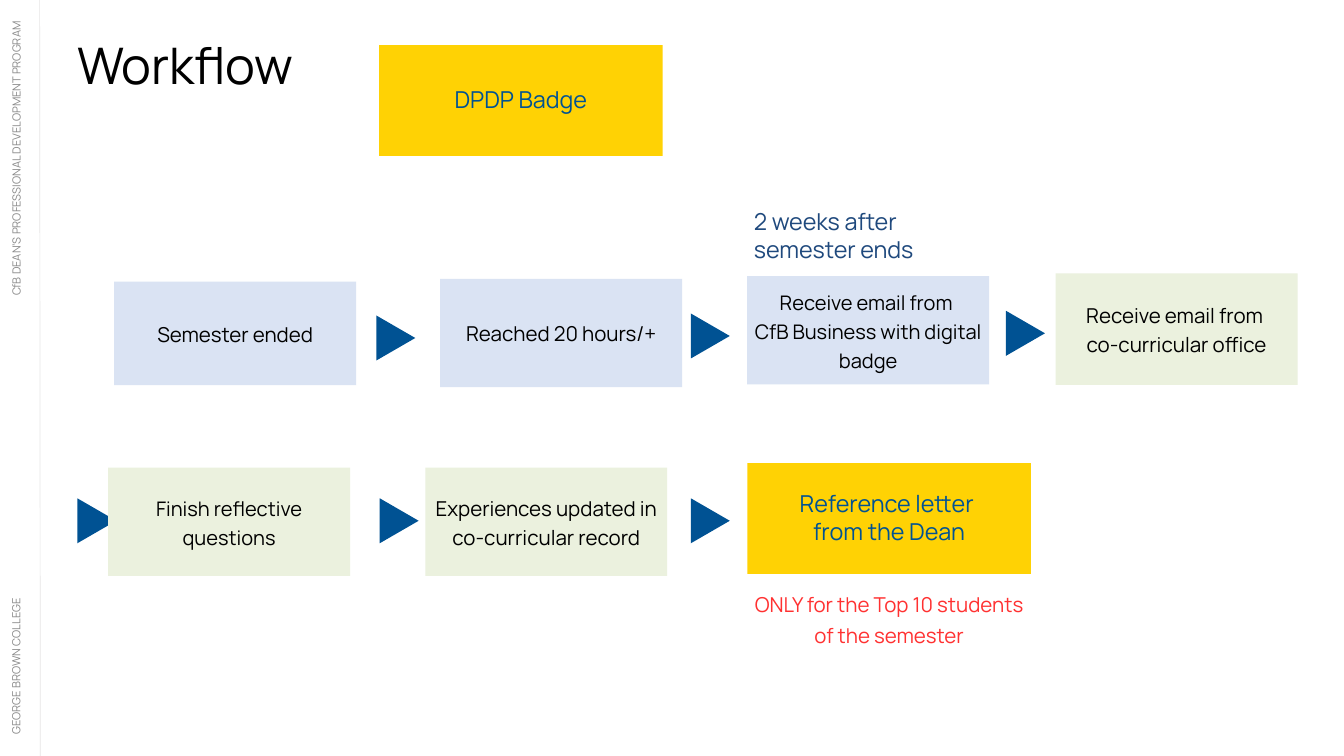
from lxml.etree import SubElement
from pptx import Presentation
from pptx.dml.color import RGBColor as Rgb
from pptx.enum.shapes import MSO_CONNECTOR as Conn, MSO_SHAPE as Kind
from pptx.enum.text import MSO_ANCHOR as Anchor, PP_ALIGN as Align
from pptx.oxml.ns import qn
from pptx.util import Inches, Pt

WIDE, HIGH = 20, 11.25
FONT = "Manrope"
BLACK = Rgb(0x00, 0x00, 0x00)
GREY = Rgb(0x89, 0x89, 0x89)
RULE = Rgb(0xE7, 0xE6, 0xE6)
BLUE = Rgb(0x00, 0x52, 0x93)
NAVY = Rgb(0x1F, 0x49, 0x7D)
RED = Rgb(0xFF, 0x31, 0x31)
GOLD = Rgb(0xFF, 0xD2, 0x04)
PALE = Rgb(0xDA, 0xE3, 0xF3)
GREEN = Rgb(0xEB, 0xF1, 0xDE)

COL3 = 11.12
STEP_W, GOLD_W = 3.6, 4.22
STEP_H, GOLD_H = 1.61, 1.65
TOP1, TOP2 = 4.11, 6.96
MID2 = 7.75

STEPS = [
    (1.7, 4.19, 1.54, PALE, 22, ["Semester ended"]),
    (6.55, 4.15, STEP_H, PALE, 22, ["Reached 20 hours/+"]),
    (COL3, TOP1, STEP_H, PALE, 21.5,
     ["Receive email from ", "CfB Business with digital badge"]),
    (15.71, 4.07, 1.66, GREEN, 22,
     ["Receive email from ", "co-curricular office"]),
    (1.61, TOP2, STEP_H, GREEN, 21.5, ["Finish reflective questions"]),
    (6.33, TOP2, STEP_H, GREEN, 22,
     ["Experiences updated in co-curricular record"]),
]
AWARDS = [
    (5.64, 0.67, ["DPDP Badge"]),
    (COL3, 6.89, ["Reference letter ", "from the Dean"]),
]
ARROWS = [(5.89, 5.03), (10.57, 5), (15.26, 4.96),
          (1.44, MID2), (5.94, MID2), (10.57, MID2)]
SIDES = [
    (-2.06, 8.41, 0.32, Align.LEFT, "GEORGE BROWN COLLEGE"),
    (-2.11, 2.57, 0.21, Align.RIGHT,
     "CfB DEAN’S PROFESSIONAL DEVELOPMENT PROGRAM"),
]

deck = Presentation()
deck.slide_width, deck.slide_height = Inches(WIDE), Inches(HIGH)
page = deck.slides.add_slide(deck.slide_layouts[6])


def write(shape, lines, size, color, align=Align.LEFT, lead=None,
          pads=(0, 0, 0, 0), anchor=Anchor.TOP):
    frame = shape.text_frame
    frame.word_wrap = True
    frame.vertical_anchor = anchor
    (frame.margin_left, frame.margin_top,
     frame.margin_right, frame.margin_bottom) = [Inches(p) for p in pads]
    for i, line in enumerate(lines):
        para = frame.add_paragraph() if i else frame.paragraphs[0]
        para.alignment = align
        if lead:
            para.line_spacing = Pt(lead)
        run = para.add_run()
        run.text = line
        run.font.name = FONT
        run.font.size = Pt(size)
        run.font.color.rgb = color


def label(x, y, w, h, lines, size, color, **more):
    box = page.shapes.add_textbox(*map(Inches, (x, y, w, h)))
    write(box, lines, size, color, **more)
    return box


def block(kind, x, y, w, h, fill):
    shape = page.shapes.add_shape(kind, *map(Inches, (x, y, w, h)))
    shape.shadow.inherit = False
    shape.fill.solid()
    shape.fill.fore_color.rgb = fill
    shape.line.fill.background()
    return shape


def card(x, y, w, h, fill, lines, size, color, lead):
    shape = block(Kind.RECTANGLE, x, y, w, h, fill)
    write(shape, lines, size, color, Align.CENTER, lead,
          (0.06, 0.02, 0.06, 0.06), Anchor.MIDDLE)


rule = page.shapes.add_connector(
    Conn.STRAIGHT, *map(Inches, (0.59, 0, 0.6, HIGH)))
rule.line.color.rgb = RULE
rule.line.width = Pt(0.75)
SubElement(rule._element.spPr, qn("a:effectLst"))

for x, y, h, align, text in SIDES:
    side = label(x, y, 4.71, h, [text], 12, GREY, align=align, lead=14.4)
    side.rotation = 270

for x, y in ARROWS:
    w, h = 0.67, 0.58
    arrow = block(Kind.ISOSCELES_TRIANGLE, x - w / 2, y - h / 2, w, h, BLUE)
    arrow.rotation = 90

label(1.15, 0.6, 18.2, 0.89, ["Workflow"], 54, BLACK, lead=58.3)

for x, y, h, fill, size, lines in STEPS:
    card(x, y, STEP_W, h, fill, lines, size, BLACK, 30.8)
for x, y, lines in AWARDS:
    card(x, y, GOLD_W, GOLD_H, GOLD, lines, 25, BLUE, 30)

label(COL3, 3.04, 3.43, 0.94, ["2 weeks after semester ends"], 25, NAVY,
      pads=(0.1, 0.05, 0.1, 0.05))
label(COL3, 8.72, GOLD_W, 0.9,
      ["ONLY for the Top 10 students of the semester"], 22, RED,
      align=Align.CENTER, lead=33)

deck.save("out.pptx")
